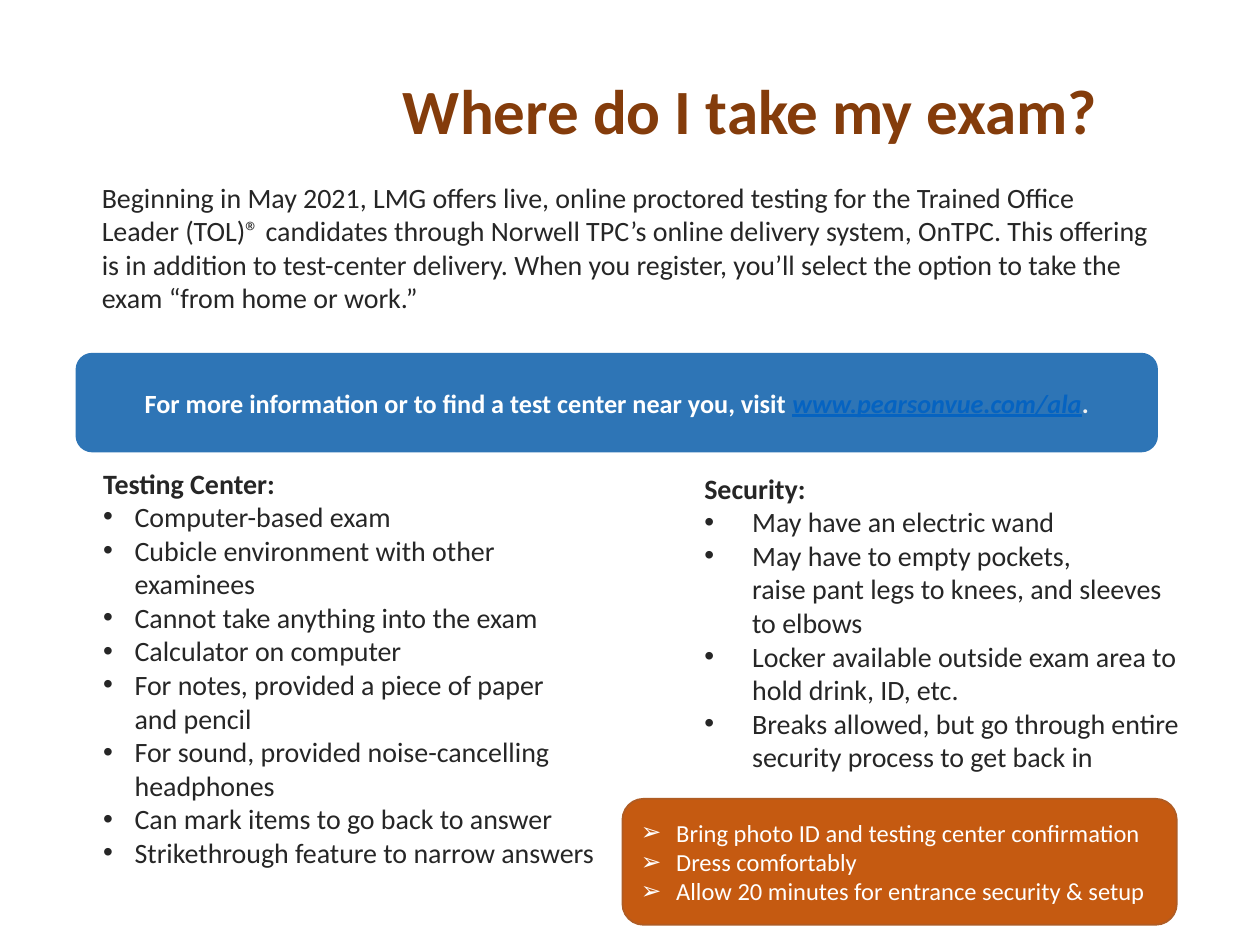
"""Build the exam location slide with its test center and security lists."""
from lxml.etree import SubElement
from pptx import Presentation
from pptx.dml.color import RGBColor
from pptx.enum.shapes import MSO_SHAPE
from pptx.enum.text import MSO_ANCHOR, PP_ALIGN
from pptx.oxml.ns import qn
from pptx.util import Inches, Pt


def add_run(paragraph, text, size, color, bold=False):
    for position, line in enumerate(text.split("\n")):
        if position:
            paragraph.add_line_break()
        run = paragraph.add_run()
        run.text = line
        run.font.name = "Calibri"
        run.font.size = Pt(size)
        run.font.bold = bold
        run.font.color.rgb = RGBColor.from_string(color)
    return run


def add_bullet(paragraph, symbol, indent):
    properties = paragraph._p.get_or_add_pPr()
    properties.set("marL", str(Inches(indent)))
    properties.set("indent", str(-Inches(indent)))
    SubElement(properties, qn("a:buFont")).set("typeface", "Arial")
    SubElement(properties, qn("a:buChar")).set("char", symbol)


DARK = "262626"
WHITE = "FFFFFF"

deck = Presentation()
deck.slide_width = Inches(10)
deck.slide_height = Inches(7.5)
slide = deck.slides.add_slide(deck.slide_layouts[6])

title = slide.shapes.add_textbox(Inches(3.1), Inches(0.49), Inches(7), Inches(0.83)).text_frame
title.word_wrap = True
title.vertical_anchor = MSO_ANCHOR.MIDDLE
title.paragraphs[0].line_spacing = 0.9
add_run(title.paragraphs[0], "Where do I take my exam?", 36, "843C0B", True)

columns = [
    ((0.72, 3.65, 4.28, 3.37), 0.1, 0.05, 0.25, "Testing Center:", [
        "Computer-based exam",
        "Cubicle environment with other examinees",
        "Cannot take anything into the exam",
        "Calculator on computer",
        "For notes, provided a piece of paper\nand pencil",
        "For sound, provided noise-cancelling headphones",
        "Can mark items to go back to answer",
        "Strikethrough feature to narrow answers",
    ]),
    ((5.52, 3.7, 3.96, 2.54), 0.07, 0.04, 0.38, "Security:", [
        "May have an electric wand",
        "May have to empty pockets,\nraise pant legs to knees, and sleeves to elbows",
        "Locker available outside exam area to hold drink, ID, etc.",
        "Breaks allowed, but go through entire security process to get back in",
    ]),
]
for place, side, edge, indent, heading, points in columns:
    column = slide.shapes.add_textbox(*map(Inches, place)).text_frame
    column.word_wrap = True
    column.margin_left = column.margin_right = Inches(side)
    column.margin_top = column.margin_bottom = Inches(edge)
    add_run(column.paragraphs[0], heading, 16, DARK, True)
    for point in points:
        paragraph = column.add_paragraph()
        add_bullet(paragraph, "•", indent)
        add_run(paragraph, point, 16, DARK)

panels = []
for preset, place, fill, line in [
    (MSO_SHAPE.ROUNDED_RECTANGLE, (4.94, 6.34, 4.4, 1), "C55A11", "AF5C24"),
    (MSO_SHAPE.FLOWCHART_ALTERNATE_PROCESS, (0.6, 2.8, 8.59, 0.79), "2E75B6", None),
]:
    panel = slide.shapes.add_shape(preset, *map(Inches, place))
    panel.shadow.inherit = False
    panel.fill.solid()
    panel.fill.fore_color.rgb = RGBColor.from_string(fill)
    if line:
        panel.line.color.rgb = RGBColor.from_string(line)
        panel.line.width = Pt(1)
    else:
        panel.line.fill.background()
    panel.text_frame.word_wrap = True
    panel.text_frame.vertical_anchor = MSO_ANCHOR.MIDDLE
    panels.append(panel.text_frame)
reminders, banner = panels

for position, reminder in enumerate([
    "Bring photo ID and testing center confirmation",
    "Dress comfortably",
    "Allow 20 minutes for entrance security & setup",
]):
    paragraph = reminders.add_paragraph() if position else reminders.paragraphs[0]
    paragraph.alignment = PP_ALIGN.LEFT
    add_bullet(paragraph, "➢", 0.28)
    add_run(paragraph, reminder, 14, WHITE)

visit = banner.paragraphs[0]
visit.alignment = PP_ALIGN.CENTER
add_run(visit, "For more information or to find a test center near you, visit ", 15, WHITE, True)
address = add_run(visit, "www.pearsonvue.com/ala", 15, "0563C1", True)
address.font.italic = True
address.font.underline = True
add_run(visit, ".", 15, "F2F2F2", True)

intro = slide.shapes.add_textbox(Inches(0.71), Inches(1.38), Inches(8.53), Inches(1.72)).text_frame
intro.word_wrap = True
add_run(
    intro.paragraphs[0],
    "Beginning in May 2021, LMG offers live, online proctored testing for the Trained Office "
    "Leader (TOL)® candidates through Norwell TPC’s online delivery system, OnTPC. This "
    "offering is in addition to test-center delivery. When you register, you’ll select the "
    "option to take the exam “from home or work.”",
    16, DARK,
)

deck.save("out.pptx")
